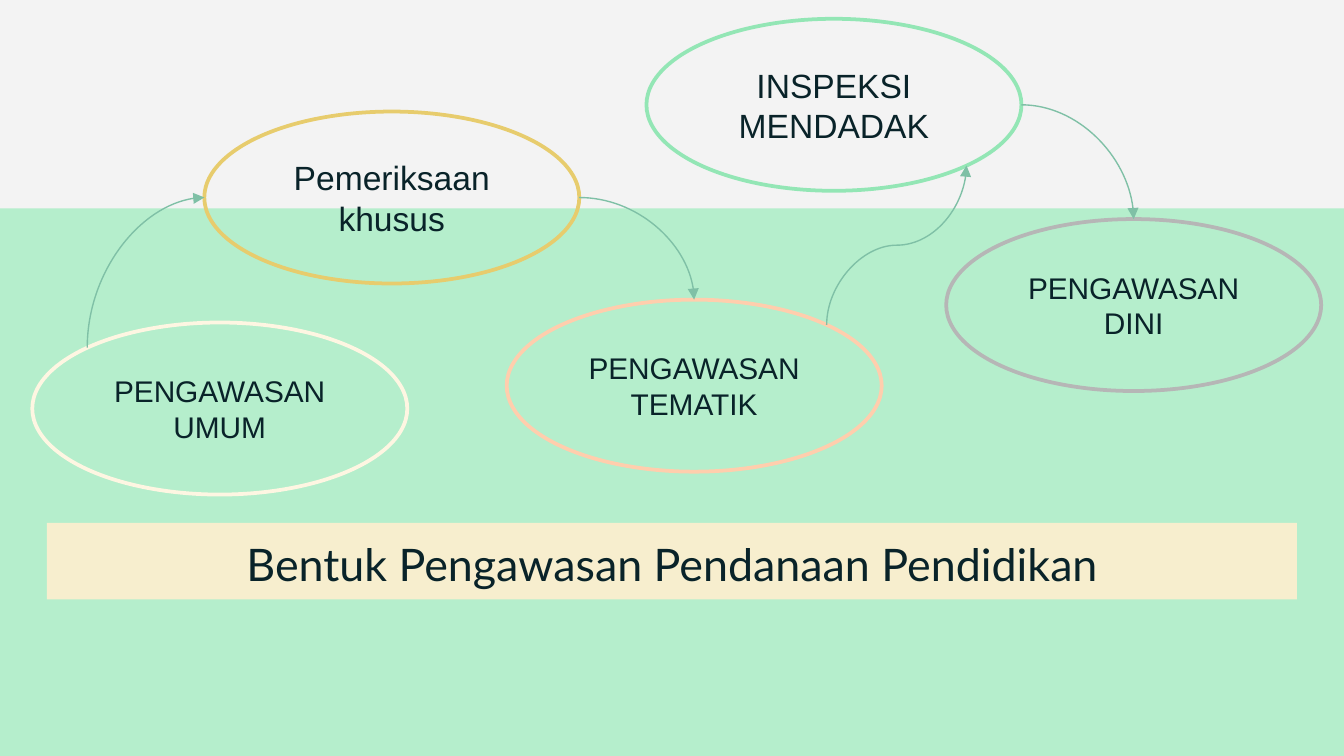
from lxml import etree
from pptx import Presentation
from pptx.dml.color import RGBColor
from pptx.enum import shapes, text
from pptx.oxml import ns
from pptx.util import Inches, Pt

TITLE = "Bentuk Pengawasan Pendanaan Pendidikan"
STAGES = {
    "general": ("PENGAWASAN UMUM", 0.24, 2.4, "FEF6E2", "normal"),
    "special": ("Pemeriksaan\nkhusus", 1.52, 0.83, "E7CC6D", "large"),
    "thematic": ("PENGAWASAN TEMATIK", 3.77, 2.23, "FFCEAD", "normal"),
    "inspection": ("INSPEKSI MENDADAK", 4.81, 0.14, "93E6B5", "large"),
    "early": ("PENGAWASAN DINI", 7.04, 1.63, "B6B6B6", "normal"),
}
FLOWS = [
    ("general", "top left", "special", "left", "curvedConnector2", True),
    ("special", "right", "thematic", "top", "curvedConnector2", False),
    ("thematic", "top right", "inspection", "bottom right", "curvedConnector3", True),
    ("inspection", "right", "early", "top", "curvedConnector2", False),
]
THEME = {
    "background": "F3F3F3", "ground": "B5EECC", "banner": "F7EECE",
    "ink": "092329", "arrow": "7FC0A6",
    "title": 24, "large": 18, "normal": 16,
    "title_font": "Lato", "font": "Arial",
}
STAGE_SIZE = (2.79, 1.28)
DIAGONAL = 0.5 ** 0.5
SITES = {
    "left": (-1, 0), "right": (1, 0), "top": (0, -1),
    "top left": (-DIAGONAL, -DIAGONAL), "top right": (DIAGONAL, -DIAGONAL),
    "bottom right": (DIAGONAL, DIAGONAL),
}


def color(name):
    return RGBColor.from_string(THEME.get(name, name))


def add_box(slide, kind, box, fill=None, line=None):
    shape = slide.shapes.add_shape(kind, *map(Inches, box))
    shape.shadow.inherit = False
    if fill:
        shape.fill.solid()
        shape.fill.fore_color.rgb = color(fill)
    else:
        shape.fill.background()
    if line:
        shape.line.color.rgb = color(line)
        shape.line.width = Pt(2)
    else:
        shape.line.fill.background()
    return shape


def write(shape, content, size="normal", font="font", anchor=text.MSO_ANCHOR.MIDDLE, inset=0.1):
    frame = shape.text_frame
    frame.word_wrap = True
    frame.vertical_anchor = anchor
    frame.margin_left = frame.margin_right = Inches(inset)
    frame.margin_top = frame.margin_bottom = Inches(inset)
    frame.text = content
    for paragraph in frame.paragraphs:
        paragraph.alignment = text.PP_ALIGN.CENTER
        for run in paragraph.runs:
            run.font.size = Pt(THEME[size])
            run.font.name = THEME[font]
            run.font.color.rgb = color("ink")


def site_point(stage, site):
    left, top = STAGES[stage][1:3]
    width, height = STAGE_SIZE
    across, down = SITES[site]
    return left + width * (1 + across) / 2, top + height * (1 + down) / 2


def add_curve(slide, start, end, preset, upward):
    (x1, y1), (x2, y2) = start, end
    if upward:
        center_x, center_y = (x1 + x2) / 2, (y1 + y2) / 2
        half_width, half_height = (y1 - y2) / 2, (x2 - x1) / 2
        x1, y1 = center_x + half_width, center_y + half_height
        x2, y2 = center_x - half_width, center_y - half_height
    connector = slide.shapes.add_connector(
        shapes.MSO_CONNECTOR.CURVE, *map(Inches, (x1, y1, x2, y2)))
    connector.line.color.rgb = color("arrow")
    connector.line.width = Pt(0.75)
    properties = connector._element.spPr
    properties.find(ns.qn("a:prstGeom")).set("prst", preset)
    if upward:
        properties.find(ns.qn("a:xfrm")).set("rot", "5400000")
    line = properties.find(ns.qn("a:ln"))
    etree.SubElement(line, ns.qn("a:tailEnd"), type="triangle")
    etree.SubElement(properties, ns.qn("a:effectLst"))


def main():
    presentation = Presentation()
    presentation.slide_width = Inches(10)
    presentation.slide_height = presentation.slide_width * 9 // 16
    slide = presentation.slides.add_slide(presentation.slide_layouts[6])
    slide.background.fill.solid()
    slide.background.fill.fore_color.rgb = color("background")

    rectangle = shapes.MSO_SHAPE.RECTANGLE
    add_box(slide, rectangle, (-0.03, 1.55, 10.05, 4.08), fill="ground")
    banner = add_box(slide, rectangle, (0.35, 3.89, 9.3, 0.57), fill="banner")
    write(banner, TITLE, size="title", font="title_font", anchor=text.MSO_ANCHOR.TOP)

    for label, left, top, outline, size in STAGES.values():
        stage = add_box(slide, shapes.MSO_SHAPE.OVAL, (left, top, *STAGE_SIZE), line=outline)
        write(stage, label, size=size)

    for source, leaving, target, entering, preset, upward in FLOWS:
        add_curve(slide, site_point(source, leaving), site_point(target, entering), preset, upward)

    presentation.save("out.pptx")


if __name__ == "__main__":
    main()
